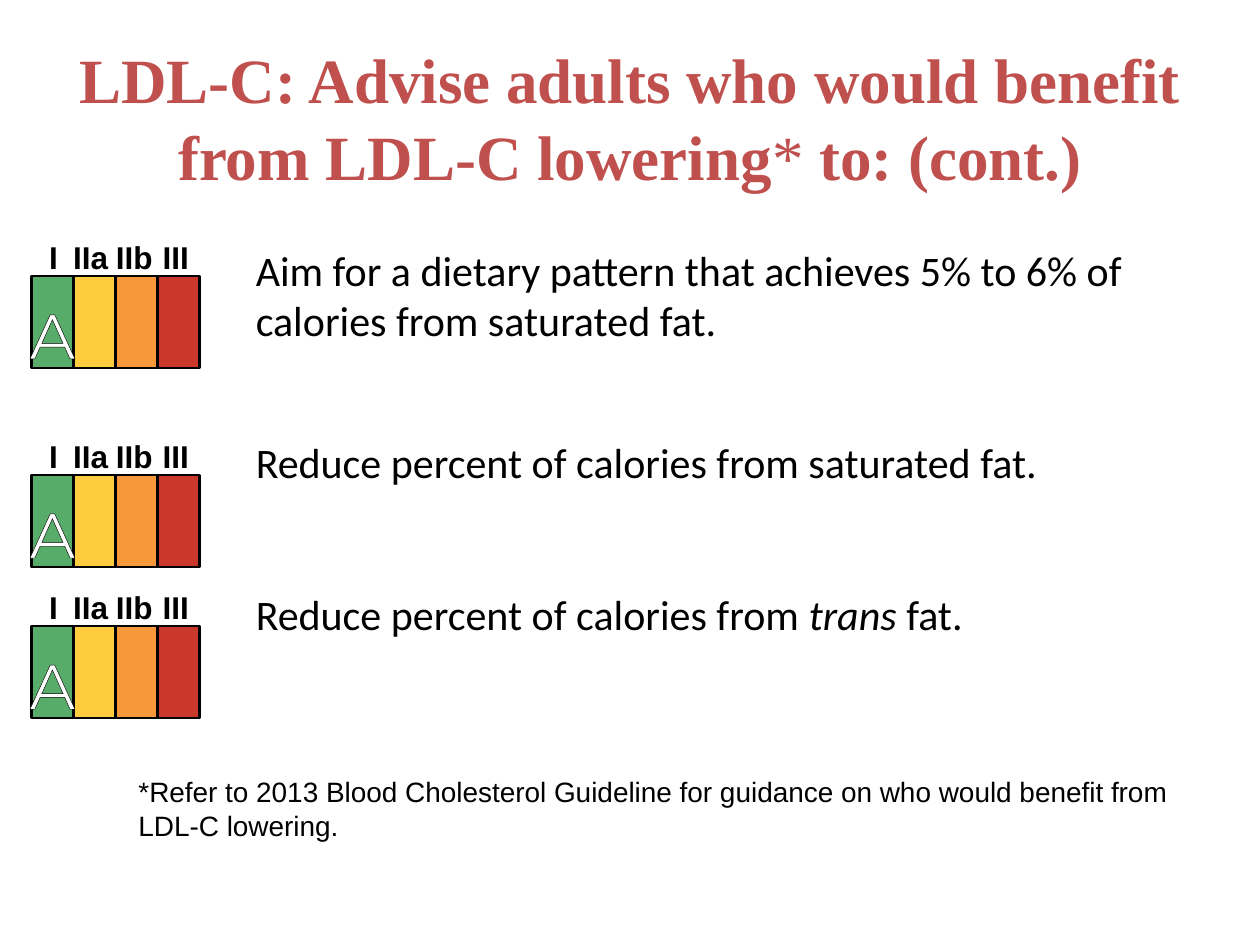
from lxml import etree
from pptx import Presentation
from pptx.dml.color import RGBColor
from pptx.enum.shapes import MSO_SHAPE
from pptx.enum.text import MSO_ANCHOR, PP_ALIGN
from pptx.oxml.ns import qn
from pptx.util import Inches, Pt

RECTANGLE = MSO_SHAPE.RECTANGLE
TOP, MIDDLE = MSO_ANCHOR.TOP, MSO_ANCHOR.MIDDLE
LEFT, CENTER = PP_ALIGN.LEFT, PP_ALIGN.CENTER

# Content: a paragraph is a list of (text, font changes)
TITLE = [
    ("LDL-C: Advise adults who would benefit from LDL-C lowering", {}),
    ("*", {"bold": False}),
    (" to: (cont.)", {}),
]
ADVICE = [
    [("Aim for a dietary pattern that achieves 5% to 6% of calories from saturated fat.", {})],
    [("Reduce percent of calories from saturated fat.", {})],
    [("Reduce percent of calories from ", {}), ("trans", {"italic": True}), (" fat.", {})],
]
ADVICE_GAPS = [0, 52, 58]
FOOTNOTE = [("*Refer to 2013 Blood Cholesterol Guideline for guidance on "
             "who would benefit from LDL-C lowering.", {})]

# Recommendation classes: label, colour, label left, label width
CLASSES = [
    ("I", "57AC69", 0.39, 0.1),
    ("IIa", "FDCC3F", 0.58, 0.32),
    ("IIb", "F7983A", 0.92, 0.33),
    ("III", "C9382A", 1.29, 0.25),
]
EVIDENCE = "A"
BADGE_TOPS = [1.89, 3.47, 4.67]
BAR_LEFT, BAR_WIDTH, BAR_HEIGHT, LABEL_HEIGHT = 0.25, 1 / 3, 0.73, 0.3
EVIDENCE_WIDTH = 0.5


def color(value):
    return RGBColor.from_string(value)


def add_outline(span, value, width):
    line = etree.Element(qn("a:ln"), w=str(Pt(width)))
    fill = etree.SubElement(line, qn("a:solidFill"))
    etree.SubElement(fill, qn("a:srgbClr"), val=value)
    span.font._element.insert(0, line)


def add_text(shapes, area, paragraphs, font="Arial", size=18, fill="000000",
             bold=False, align=LEFT, anchor=TOP, wrap=True,
             margins=(0.1, 0.05, 0.1, 0.05), gaps=None, leading=None, outline=None):
    box = shapes.add_textbox(*map(Inches, area))
    frame = box.text_frame
    frame.word_wrap = wrap
    frame.vertical_anchor = anchor
    (frame.margin_left, frame.margin_top,
     frame.margin_right, frame.margin_bottom) = map(Inches, margins)
    for index, spans in enumerate(paragraphs):
        para = frame.add_paragraph() if index else frame.paragraphs[0]
        para.alignment = align
        if gaps:
            para.space_before = Pt(gaps[index])
        if leading:
            para.line_spacing = Pt(leading)
        for text, changes in spans:
            span = para.add_run()
            span.text = text
            span.font.name = font
            span.font.size = Pt(size)
            span.font.bold = changes.get("bold", bold)
            span.font.italic = changes.get("italic", False)
            span.font.color.rgb = color(fill)
            if outline:
                add_outline(span, *outline)
    return box


def add_badge(page, top):
    shapes = page.shapes.add_group_shape().shapes
    bar_top = top + LABEL_HEIGHT
    for index, (label, fill, left, width) in enumerate(CLASSES):
        bar = shapes.add_shape(RECTANGLE, Inches(BAR_LEFT + index * BAR_WIDTH),
                               Inches(bar_top), Inches(BAR_WIDTH), Inches(BAR_HEIGHT))
        bar.shadow.inherit = False
        bar.fill.solid()
        bar.fill.fore_color.rgb = color(fill)
        bar.line.color.rgb = color("000000")
        bar.line.width = Pt(1.5)
        add_text(shapes, (left, top, width, LABEL_HEIGHT), [[(label, {})]],
                 bold=True, wrap=False, margins=(0, 0, 0, 0))
    # Level of evidence, centred on the first bar
    evidence_left = BAR_LEFT + (BAR_WIDTH - EVIDENCE_WIDTH) / 2
    add_text(shapes, (evidence_left, bar_top + 0.11, EVIDENCE_WIDTH, 0.43),
             [[(EVIDENCE, {})]], font="Montserrat", size=36, fill="FFFFFF",
             align=CENTER, wrap=False, margins=(0, 0.05, 0, 0.05),
             outline=("000000", 0.75))


def main():
    deck = Presentation()
    deck.slide_width, deck.slide_height = Inches(10), Inches(7.5)
    page = deck.slides.add_slide(deck.slide_layouts[6])

    # Advice and title
    add_text(page.shapes, (1.83, 1.5, 7.58, 4.33), ADVICE, font="Calibri", size=24,
             margins=(0.2, 0.44, 0.1, 0.05), gaps=ADVICE_GAPS)
    add_text(page.shapes, (0, 0.3, 10, 1.25), [TITLE], font="Times New Roman", size=36,
             fill="C0504D", bold=True, align=CENTER, anchor=MIDDLE, leading=43.5)

    # Class and evidence badges
    for top in BADGE_TOPS:
        add_badge(page, top)

    # Footnote
    add_text(page.shapes, (1, 5.5, 8.75, 1.55), [FOOTNOTE], size=16,
             margins=(0.1, 0.65, 0.1, 0.05))

    deck.save("out.pptx")


if __name__ == "__main__":
    main()
